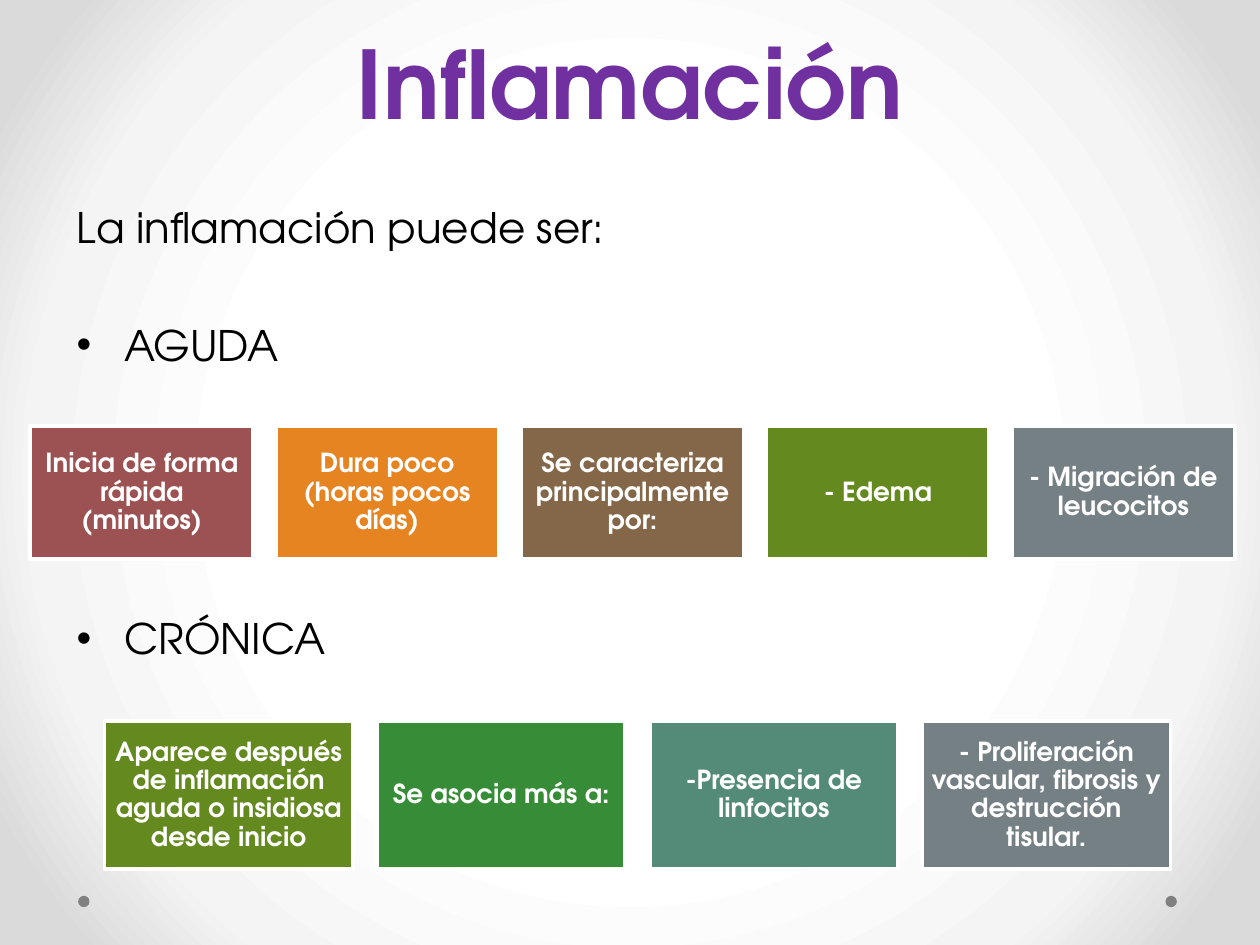
from lxml import etree
from pptx import Presentation
from pptx.dml.color import RGBColor
from pptx.enum import shapes, text
from pptx.oxml import ns
from pptx.util import Inches, Pt

FONT = "TeX Gyre Adventor"
BLACK = RGBColor(0x00, 0x00, 0x00)
WHITE = RGBColor(0xFF, 0xFF, 0xFF)
PURPLE = RGBColor(0x70, 0x30, 0xA0)
GRAY = RGBColor(0x80, 0x80, 0x80)
RED = RGBColor(0x9C, 0x52, 0x52)
ORANGE = RGBColor(0xE6, 0x84, 0x22)
BROWN = RGBColor(0x84, 0x66, 0x48)
OLIVE = RGBColor(0x63, 0x89, 0x1F)
GREEN = RGBColor(0x37, 0x8D, 0x37)
TEAL = RGBColor(0x53, 0x8B, 0x78)
SLATE = RGBColor(0x75, 0x80, 0x85)


def write(p, content, size=24, color=BLACK, bold=False,
          align=text.PP_ALIGN.LEFT, line=None, before=0, bullet=False):
    p.alignment = align
    p.line_spacing = line
    p.space_before = Pt(before)
    r = p.add_run()
    r.text = content
    r.font.name = FONT
    r.font.size = Pt(size)
    r.font.bold = bold
    r.font.color.rgb = color
    if bullet:
        pPr = p._p.get_or_add_pPr()
        pPr.set("marL", str(Inches(0.38)))
        pPr.set("indent", str(-Inches(0.38)))
        etree.SubElement(pPr, ns.qn("a:buFont"), typeface="Arial")
        etree.SubElement(pPr, ns.qn("a:buChar"), char="•")


def add_shape(s, kind, left, top, width, height, color):
    sp = s.shapes.add_shape(kind, Inches(left), Inches(top), Inches(width), Inches(height))
    sp.shadow.inherit = False
    sp.fill.solid()
    sp.fill.fore_color.rgb = color
    sp.line.fill.background()
    return sp


prs = Presentation()
prs.slide_width = Inches(10)
prs.slide_height = Inches(7.5)
s = prs.slides.add_slide(prs.slide_layouts[6])

s.background.fill.gradient()
grad = s.element.find(".//" + ns.qn("a:gradFill"))
for child in list(grad):
    grad.remove(child)
stops = etree.SubElement(grad, ns.qn("a:gsLst"))
for pos, color in ((50, "FFFFFF"), (76, "F4F4F4"), (92, "DADADA")):
    gs = etree.SubElement(stops, ns.qn("a:gs"), pos=str(pos * 1000))
    etree.SubElement(gs, ns.qn("a:srgbClr"), val=color)
circle = etree.SubElement(grad, ns.qn("a:path"), path="circle")
etree.SubElement(circle, ns.qn("a:fillToRect"), l="50000", t="50000", r="50000", b="50000")

for left in (9.25, 0.62):
    add_shape(s, shapes.MSO_SHAPE.OVAL, left, 7.11, 0.09, 0.09, GRAY)

tf = s.shapes.add_textbox(Inches(0.5), Inches(0.21), Inches(9), Inches(0.94)).text_frame
tf.word_wrap = True
tf.vertical_anchor = text.MSO_ANCHOR.BOTTOM
write(tf.paragraphs[0], "Inflamación", size=54, color=PURPLE, bold=True,
      align=text.PP_ALIGN.CENTER, line=Pt(58))

tf = s.shapes.add_textbox(Inches(0.51), Inches(1.55), Inches(9), Inches(4.95)).text_frame
tf.word_wrap = True
write(tf.paragraphs[0], "La inflamación puede ser:")
write(tf.add_paragraph(), "AGUDA", before=38.4, bullet=True)
write(tf.add_paragraph(), "CRÓNICA", before=139, bullet=True)

rows = [
    (0.24, 8.03, 3.38, 1.77, 1.06, [
        ("Inicia de forma rápida (minutos)", RED),
        ("Dura poco (horas pocos días)", ORANGE),
        ("Se caracteriza principalmente por:", BROWN),
        ("- Edema", OLIVE),
        ("- Migración de leucocitos", SLATE),
    ]),
    (0.83, 7.32, 5.72, 1.97, 1.18, [
        ("Aparece después de inflamación aguda o insidiosa desde inicio", OLIVE),
        ("Se asocia más a:", GREEN),
        ("-Presencia de linfocitos", TEAL),
        ("- Proliferación vascular, fibrosis y destrucción tisular.", SLATE),
    ]),
]
for first, last, top, width, height, boxes in rows:
    pitch = (last - first) / (len(boxes) - 1)
    for i, (content, color) in enumerate(boxes):
        sp = add_shape(s, shapes.MSO_SHAPE.RECTANGLE, first + i * pitch, top, width, height, color)
        sp.line.color.rgb = WHITE
        sp.line.width = Pt(2.25)
        tf = sp.text_frame
        tf.word_wrap = True
        tf.vertical_anchor = text.MSO_ANCHOR.MIDDLE
        tf.margin_left = tf.margin_right = tf.margin_top = tf.margin_bottom = Inches(0.06)
        write(tf.paragraphs[0], content, size=15, color=WHITE, bold=True,
              align=text.PP_ALIGN.CENTER, line=0.9)

prs.save("out.pptx")
